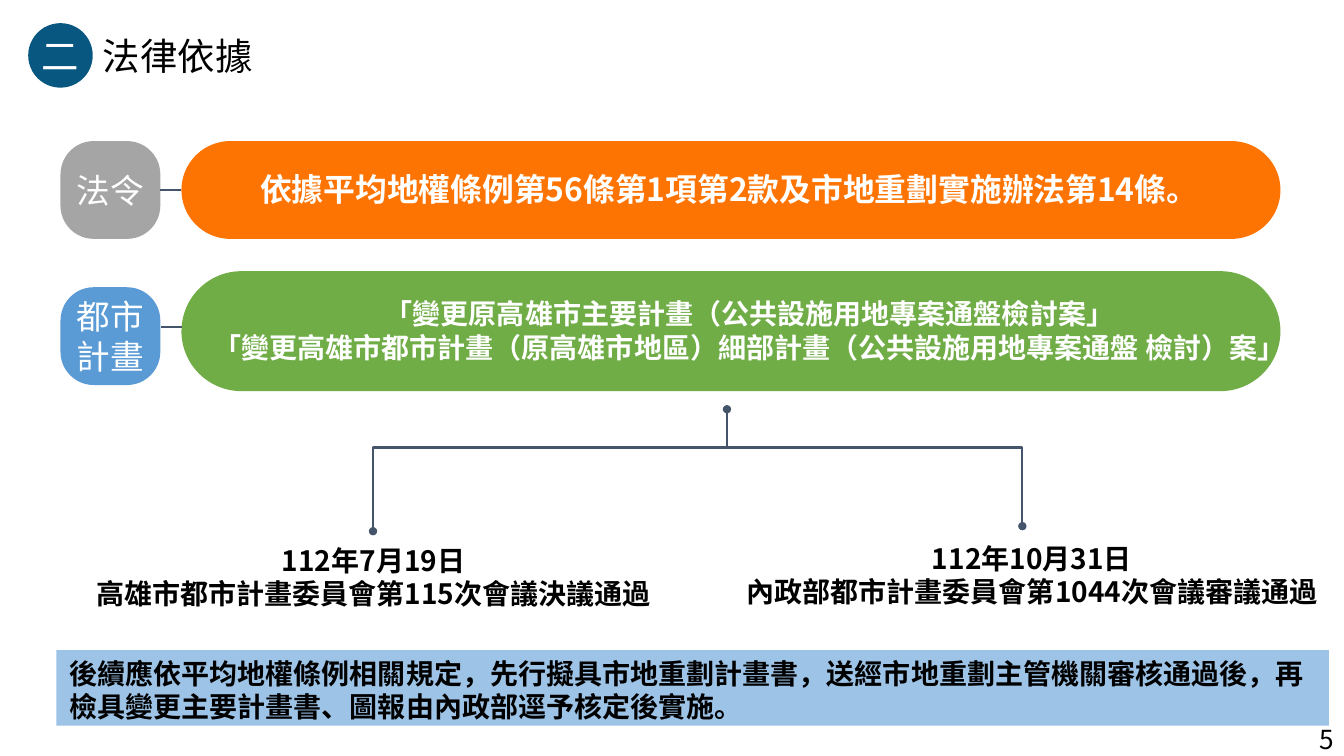
from lxml import etree
from pptx import Presentation
from pptx import util as u
from pptx.dml.color import RGBColor
from pptx.enum import shapes, text
from pptx.oxml import ns

FONT = "Noto Sans CJK SC"
WHITE, BLACK = RGBColor(255, 255, 255), RGBColor(0, 0, 0)
NAVY, SLATE = RGBColor(0x08, 0x57, 0x80), RGBColor(0x44, 0x54, 0x6A)
ORANGE, GREEN = RGBColor(0xFE, 0x74, 0x02), RGBColor(0x70, 0xAD, 0x47)
GRAY, BLUE = RGBColor(0xA5, 0xA5, 0xA5), RGBColor(0x5B, 0x9B, 0xD5)
PALE = RGBColor(0x9D, 0xC3, 0xE6)
SHAPE = shapes.MSO_SHAPE
LEFT, CENTER = text.PP_ALIGN.LEFT, text.PP_ALIGN.CENTER
TOP, MIDDLE = text.MSO_ANCHOR.TOP, text.MSO_ANCHOR.MIDDLE


def inches(box):
    return [u.Inches(v) for v in box]


def write(sp, lines, size, color, bold=False, align=CENTER, anchor=TOP,
          margins=(0.1, 0.05), wrap=True):
    """Fill a shape with one paragraph per line."""
    tf = sp.text_frame
    tf.auto_size = text.MSO_AUTO_SIZE.NONE
    tf.word_wrap = wrap
    tf.vertical_anchor = anchor
    tf.margin_left = tf.margin_right = u.Inches(margins[0])
    tf.margin_top = tf.margin_bottom = u.Inches(margins[1])
    for i, line in enumerate(lines):
        p = tf.add_paragraph() if i else tf.paragraphs[0]
        p.alignment = align
        r = p.add_run()
        r.text = line
        r.font.size, r.font.bold, r.font.name = u.Pt(size), bold, FONT
        r.font.color.rgb = color
        ea = etree.SubElement(r.font._element, ns.qn("a:ea"))
        ea.set("typeface", FONT)


def add_block(slide, kind, box, fill, radius=None):
    sp = slide.shapes.add_shape(kind, *inches(box))
    sp.shadow.inherit = False
    sp.fill.solid()
    sp.fill.fore_color.rgb = fill
    sp.line.fill.background()
    if radius is not None:
        sp.adjustments[0] = radius
    return sp


def add_text(slide, box, lines, size, color, **style):
    write(slide.shapes.add_textbox(*inches(box)), lines, size, color, **style)


def style_line(line, *ends):
    """Slate line with round dots at the given ends (headEnd, tailEnd)."""
    line.line.color.rgb = SLATE
    line.line.width = u.Pt(1.5)
    ln = line.line._get_or_add_ln()
    for end in ends:
        etree.SubElement(ln, ns.qn("a:" + end)).set("type", "oval")


def add_line(slide, start, stop, *ends):
    cn = slide.shapes.add_connector(shapes.MSO_CONNECTOR.STRAIGHT,
                                    *inches(start + stop))
    style_line(cn, *ends)
    etree.SubElement(cn._element.spPr, ns.qn("a:effectLst"))
    return cn


def add_heading(slide, box, number, title):
    x, y, w, h = box
    # Numbered badge
    badge = add_block(slide, SHAPE.OVAL, (x, y, h, h), NAVY)
    write(badge, [number], 26.7, WHITE, anchor=MIDDLE, wrap=False)
    # Title
    sp = slide.shapes.title
    sp.left, sp.top, sp.width, sp.height = inches((x + h, y + 0.05, w - h, h - 0.09))
    write(sp, [title], 26.7, BLACK, align=LEFT, wrap=False)


def add_basis(slide, pill_box, pill_fill, label_top, label, label_fill):
    """Long pill with a rounded label to its left."""
    pill = add_block(slide, SHAPE.ROUNDED_RECTANGLE, pill_box, pill_fill, 0.5)
    tag = add_block(slide, SHAPE.ROUNDED_RECTANGLE,
                    (pill_box[0] - 1.2, label_top, 0.99, 0.97), label_fill, 0.34)
    write(tag, [label], 24, WHITE, anchor=MIDDLE, margins=(0, 0))
    return tag, pill


def add_branches(slide, box, stem_x, branches):
    """Stem, two-legged bracket and the decision under each leg."""
    x, y, w, h = box
    bar = y + 0.38
    add_line(slide, (stem_x, y), (stem_x, bar), "headEnd")
    points = [(x, bar), (x + w, bar), (x + w, y + h - 0.05)]
    fb = slide.shapes.build_freeform(u.Inches(x), u.Inches(y + h))
    fb.add_line_segments([inches(pt) for pt in points], close=False)
    bracket = fb.convert_to_shape()
    bracket.shadow.inherit = False
    bracket.fill.background()
    style_line(bracket, "headEnd", "tailEnd")
    for branch_box, lines in branches:
        add_text(slide, branch_box, lines, 20, BLACK, bold=True)


def add_note(slide, box, note):
    x, y, w, h = box
    add_block(slide, SHAPE.RECTANGLE, box, PALE)
    add_text(slide, (x + 0.03, y + 0.01, w + 0.07, h + 0.02), [note], 20, BLACK,
             bold=True, align=LEFT)


def build_legal_basis(prs):
    slide = prs.slides.add_slide(prs.slide_layouts[5])
    add_heading(slide, (0.28, 0.23, 2.34, 0.64), "二", "法律依據")

    # Statute row
    tag, pill = add_basis(slide, (1.8, 1.4, 10.9, 0.97), ORANGE, 1.4, "法令", GRAY)
    add_text(slide, (2.45, 1.55, 10.26, 0.64),
             ["依據平均地權條例第56條第1項第2款及市地重劃實施辦法第14條。"],
             22.7, WHITE, bold=True, align=LEFT, anchor=MIDDLE, margins=(0.13, 0.13))
    link = add_line(slide, (1.59, 1.89), (1.8, 1.89))
    link.begin_connect(tag, 3)
    link.end_connect(pill, 1)

    # Urban plan row
    add_basis(slide, (1.8, 2.69, 10.9, 1.19), GREEN, 2.85, "都市計畫", BLUE)
    add_text(slide, (1.97, 2.85, 10.93, 0.85),
             ["「變更原高雄市主要計畫（公共設施用地專案通盤檢討案」",
              "「變更高雄市都市計畫（原高雄市地區）細部計畫（公共設施用地專案通盤 檢討）案」"],
             20, WHITE, bold=True, anchor=MIDDLE, margins=(0.13, 0.13))
    add_line(slide, (1.6, 3.24), (1.81, 3.24))

    # Decisions
    add_branches(slide, (3.7, 4.06, 6.44, 1.21), 7.21, [
        ((0.37, 5.34, 6.67, 0.77),
         ["112年7月19日", "高雄市都市計畫委員會第115次會議決議通過"]),
        ((7.14, 5.32, 6.19, 0.77),
         ["112年10月31日", "內政部都市計畫委員會第1044次會議審議通過"]),
    ])

    # Next step and page number
    add_note(slide, (0.56, 6.45, 12.62, 0.75),
             "後續應依平均地權條例相關規定，先行擬具市地重劃計畫書，送經市地重劃主管機關"
             "審核通過後，再檢具變更主要計畫書、圖報由內政部逕予核定後實施。")
    add_text(slide, (13.09, 7.17, 0.24, 0.33), ["5"], 18.7, BLACK,
             align=LEFT, anchor=MIDDLE, margins=(0, 0))


def main():
    prs = Presentation()
    prs.slide_width, prs.slide_height = inches((13.33, 7.5))
    build_legal_basis(prs)
    prs.save("out.pptx")


if __name__ == "__main__":
    main()
